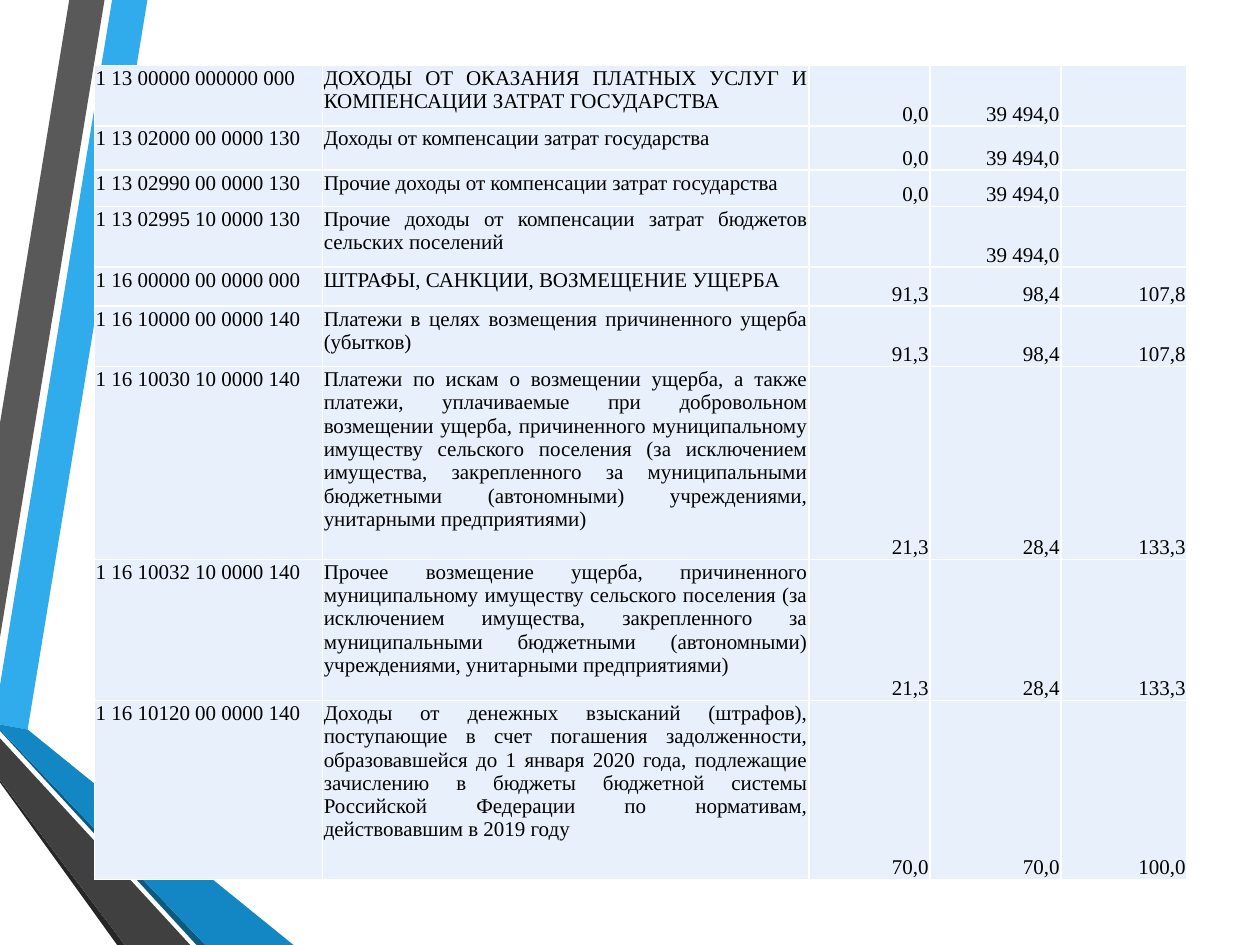
from pptx import Presentation
from pptx.dml.color import RGBColor
from pptx.enum.text import MSO_ANCHOR, PP_ALIGN
from pptx.oxml import parse_xml
from pptx.oxml.ns import nsdecls
from pptx.util import Inches, Pt

LEFT, RIGHT, JUSTIFY = PP_ALIGN.LEFT, PP_ALIGN.RIGHT, PP_ALIGN.JUSTIFY
TOP, BOTTOM = MSO_ANCHOR.TOP, MSO_ANCHOR.BOTTOM
BLANK_LAYOUT = 6

# Grid: 100 columns by 75 rows of square cells
GRID_COLS, GRID_ROWS = 100, 75

# Ribbon outlines in grid units, back to front
RIBBONS = [
    ("30ACEC", [(0, 54.4), (0, 57.5), (2.2, 57.9), (11.7, 0), (8.9, 0)]),
    ("595959", [(8.3, 0), (5.5, 0), (0, 33.6), (0, 50.6)]),
    ("262626", [(0, 61.9), (0, 62.1), (9.3, 75), (9.9, 75)]),
    ("0C5A82", [(0, 57.9), (0, 58), (15.6, 75), (16.3, 75)]),
    ("1287C3", [(0, 57.9), (16.3, 75), (23.3, 75), (2.2, 57.9), (0, 57.5)]),
    ("404040", [(0, 61.9), (9.9, 75), (15.1, 75), (0, 58.6)]),
]

# Budget table: code, name, plan, actual, percent
COL_WIDTHS = [18.1, 38.6, 9.6, 10.4, 10]
ROW_HEIGHTS = [4.8, 3.5, 2.9, 4.8, 3.1, 4.8, 15.3, 11.2, 14.2]
COL_FORMATS = [(LEFT, TOP), (JUSTIFY, TOP)] + [(RIGHT, BOTTOM)] * 3
INCOME = [
    ("1 13 00000 000000 000",
     "ДОХОДЫ ОТ ОКАЗАНИЯ ПЛАТНЫХ УСЛУГ И КОМПЕНСАЦИИ ЗАТРАТ ГОСУДАРСТВА",
     "0,0", "39 494,0", ""),
    ("1 13 02000 00 0000 130", "Доходы от компенсации затрат государства",
     "0,0", "39 494,0", ""),
    ("1 13 02990 00 0000 130", "Прочие доходы от компенсации затрат государства",
     "0,0", "39 494,0", ""),
    ("1 13 02995 10 0000 130",
     "Прочие доходы от компенсации затрат бюджетов сельских поселений",
     "", "39 494,0", ""),
    ("1 16 00000 00 0000 000", "ШТРАФЫ, САНКЦИИ, ВОЗМЕЩЕНИЕ УЩЕРБА",
     "91,3", "98,4", "107,8"),
    ("1 16 10000 00 0000 140",
     "Платежи в целях возмещения причиненного ущерба (убытков)",
     "91,3", "98,4", "107,8"),
    ("1 16 10030 10 0000 140",
     "Платежи по искам о возмещении ущерба, а также платежи, уплачиваемые "
     "при добровольном возмещении ущерба, причиненного муниципальному "
     "имуществу сельского поселения (за исключением имущества, закрепленного "
     "за муниципальными бюджетными (автономными) учреждениями, унитарными "
     "предприятиями)",
     "21,3", "28,4", "133,3"),
    ("1 16 10032 10 0000 140",
     "Прочее возмещение ущерба, причиненного муниципальному имуществу "
     "сельского поселения (за исключением имущества, закрепленного за "
     "муниципальными бюджетными (автономными) учреждениями, унитарными "
     "предприятиями)",
     "21,3", "28,4", "133,3"),
    ("1 16 10120 00 0000 140",
     "Доходы от денежных взысканий (штрафов), поступающие в счет погашения "
     "задолженности, образовавшейся до 1 января 2020 года, подлежащие "
     "зачислению в бюджеты бюджетной системы Российской Федерации по "
     "нормативам, действовавшим в 2019 году",
     "70,0", "70,0", "100,0"),
]


def rgb(hex_color):
    return RGBColor.from_string(hex_color)


def write(tf, text, font="Times New Roman", size=12, color="000000", align=LEFT):
    p = tf.paragraphs[0]
    p.alignment = align
    if not text:
        # An empty cell keeps the text size so that its row stays low
        p._p.get_or_add_endParaRPr().set("sz", str(size * 100))
        return
    r = p.add_run()
    r.text = text
    r.font.name = font
    r.font.size = Pt(size)
    r.font.color.rgb = rgb(color)


class Deck:
    cell_fill = "E8F1FB"
    border = "FFFFFF"
    border_width = 1
    inset = 0.1

    def __init__(self, prs):
        self.unit_x = prs.slide_width / GRID_COLS
        self.unit_y = prs.slide_height / GRID_ROWS
        self.s = prs.slides.add_slide(prs.slide_layouts[BLANK_LAYOUT])

    def x(self, cols):
        return round(cols * self.unit_x)

    def y(self, rows):
        return round(rows * self.unit_y)

    def ribbon(self, color, points):
        start, *rest = [(self.x(col), self.y(row)) for col, row in points]
        builder = self.s.shapes.build_freeform(*start)
        builder.add_line_segments(rest, close=True)
        sp = builder.convert_to_shape()
        sp.shadow.inherit = False
        sp.fill.solid()
        sp.fill.fore_color.rgb = rgb(color)
        sp.line.fill.background()

    def borders(self, cell):
        tc_pr = cell._tc.get_or_add_tcPr()
        for i, side in enumerate(("lnL", "lnR", "lnT", "lnB")):
            tc_pr.insert(i, parse_xml(
                f'<a:{side} {nsdecls("a")} w="{Pt(self.border_width)}"><a:solidFill>'
                f'<a:srgbClr val="{self.border}"/></a:solidFill></a:{side}>'))

    def cell(self, cell, text, align, anchor):
        cell.margin_left = cell.margin_right = self.x(self.inset)
        cell.margin_top, cell.margin_bottom = self.y(self.inset), 0
        cell.vertical_anchor = anchor
        cell.fill.solid()
        cell.fill.fore_color.rgb = rgb(self.cell_fill)
        self.borders(cell)
        write(cell.text_frame, text, align=align)

    def table(self, left, top, widths, heights, rows, formats):
        table = self.s.shapes.add_table(
            len(rows), len(widths), self.x(left), self.y(top),
            self.x(sum(widths)), self.y(sum(heights))).table
        table.first_row = table.horz_banding = False
        for column, width in zip(table.columns, widths):
            column.width = self.x(width)
        for row, height, texts in zip(table.rows, heights, rows):
            row.height = self.y(height)
            for cell, text, (align, anchor) in zip(row.cells, texts, formats):
                self.cell(cell, text, align, anchor)


def main():
    prs = Presentation()
    prs.slide_width, prs.slide_height = Inches(10), Inches(7.5)
    deck = Deck(prs)

    # Ribbons along the left edge
    for color, points in RIBBONS:
        deck.ribbon(color, points)

    # Budget income table
    deck.table(7.5, 5.2, COL_WIDTHS, ROW_HEIGHTS, INCOME, COL_FORMATS)

    prs.save("out.pptx")


if __name__ == "__main__":
    main()
